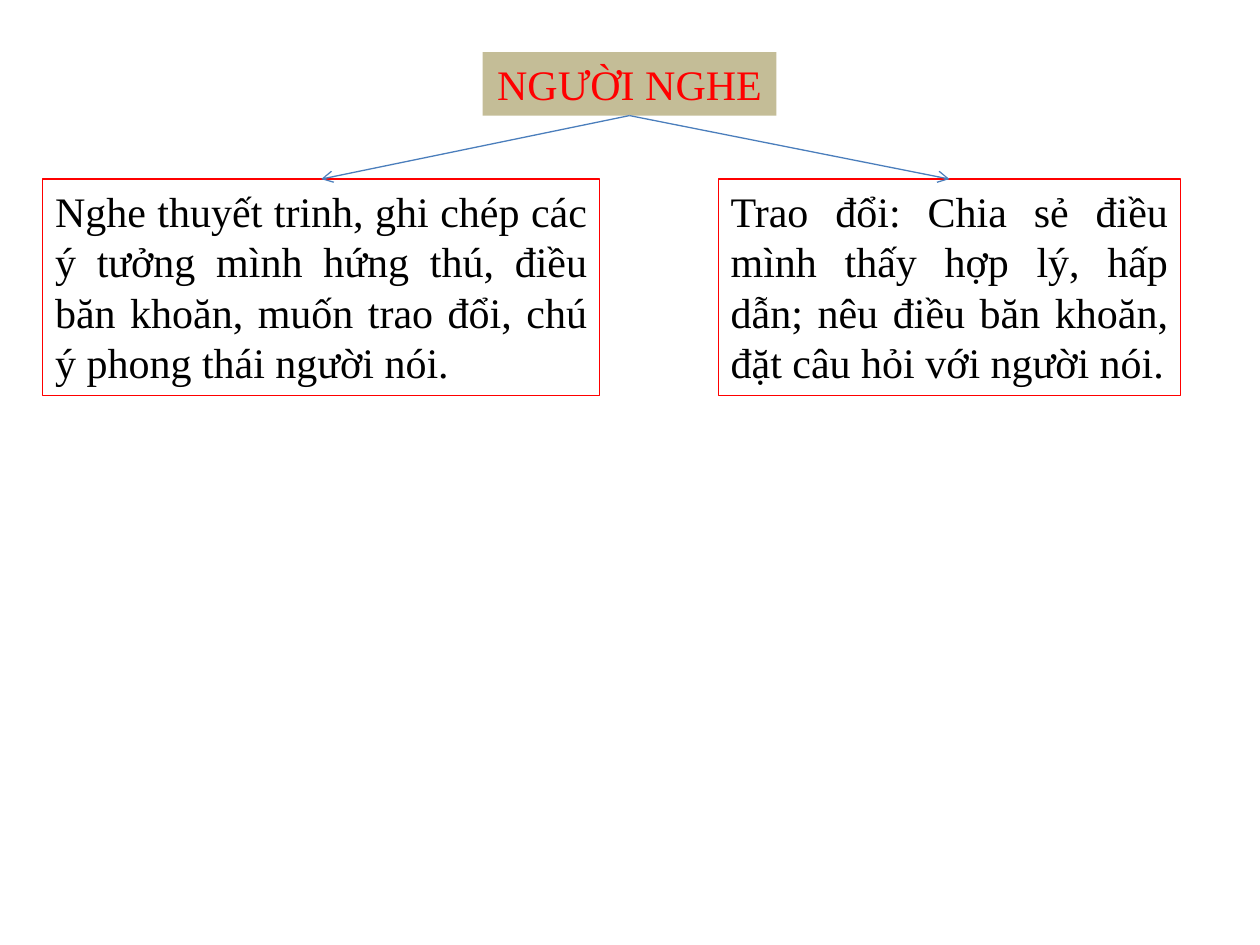
from lxml import etree
from pptx import Presentation
from pptx import util as u
from pptx.dml.color import RGBColor
from pptx.enum import shapes, text
from pptx.oxml.ns import qn

RED = RGBColor(0xFF, 0x00, 0x00)
BLACK = RGBColor(0x00, 0x00, 0x00)
TAN = RGBColor(0xC4, 0xBD, 0x97)
BLUE = RGBColor(0x4B, 0x7E, 0xBC)


def write(shape, words, color, alignment):
    paragraph = shape.text_frame.paragraphs[0]
    paragraph.alignment = alignment
    run = paragraph.add_run()
    run.text = words
    run.font.name = "Times New Roman"
    run.font.size = u.Pt(24)
    run.font.color.rgb = color


presentation = Presentation()
presentation.slide_width = u.Cm(25.4)
presentation.slide_height = u.Cm(19.05)
slide = presentation.slides.add_slide(presentation.slide_layouts[5])

title = slide.shapes.title
title.left, title.top = u.Cm(9.73), u.Cm(1.05)
title.width, title.height = u.Cm(5.92), u.Cm(1.28)
title.fill.solid()
title.fill.fore_color.rgb = TAN
title.text_frame.word_wrap = False
title.text_frame.auto_size = text.MSO_AUTO_SIZE.NONE
write(title, "NGƯỜI NGHE", RED, text.PP_ALIGN.CENTER)

tasks = [
    (0.86, 11.23, "Nghe thuyết trinh, ghi chép các ý tưởng mình hứng thú, điều băn khoăn, "
                  "muốn trao đổi, chú ý phong thái người nói."),
    (14.48, 9.32, "Trao đổi: Chia sẻ điều mình thấy hợp lý, hấp dẫn; nêu điều băn khoăn, "
                  "đặt câu hỏi với người nói."),
]
for left, width, words in tasks:
    box = slide.shapes.add_textbox(u.Cm(left), u.Cm(3.61), u.Cm(width), u.Cm(4.36))
    box.line.color.rgb = RED
    box.line.width = u.Pt(0.75)
    box.text_frame.word_wrap = True
    box.text_frame.auto_size = text.MSO_AUTO_SIZE.SHAPE_TO_FIT_TEXT
    write(box, words, BLACK, text.PP_ALIGN.JUSTIFY)

    arrow = slide.shapes.add_connector(shapes.MSO_CONNECTOR.STRAIGHT, 0, 0, 0, 0)
    arrow.begin_connect(title, 2)
    arrow.end_connect(box, 0)
    arrow.line.color.rgb = BLUE
    arrow.line.width = u.Pt(0.75)
    etree.SubElement(arrow.line._get_or_add_ln(), qn("a:tailEnd"), type="arrow")
    etree.SubElement(arrow._element.spPr, qn("a:effectLst"))

presentation.save("out.pptx")
